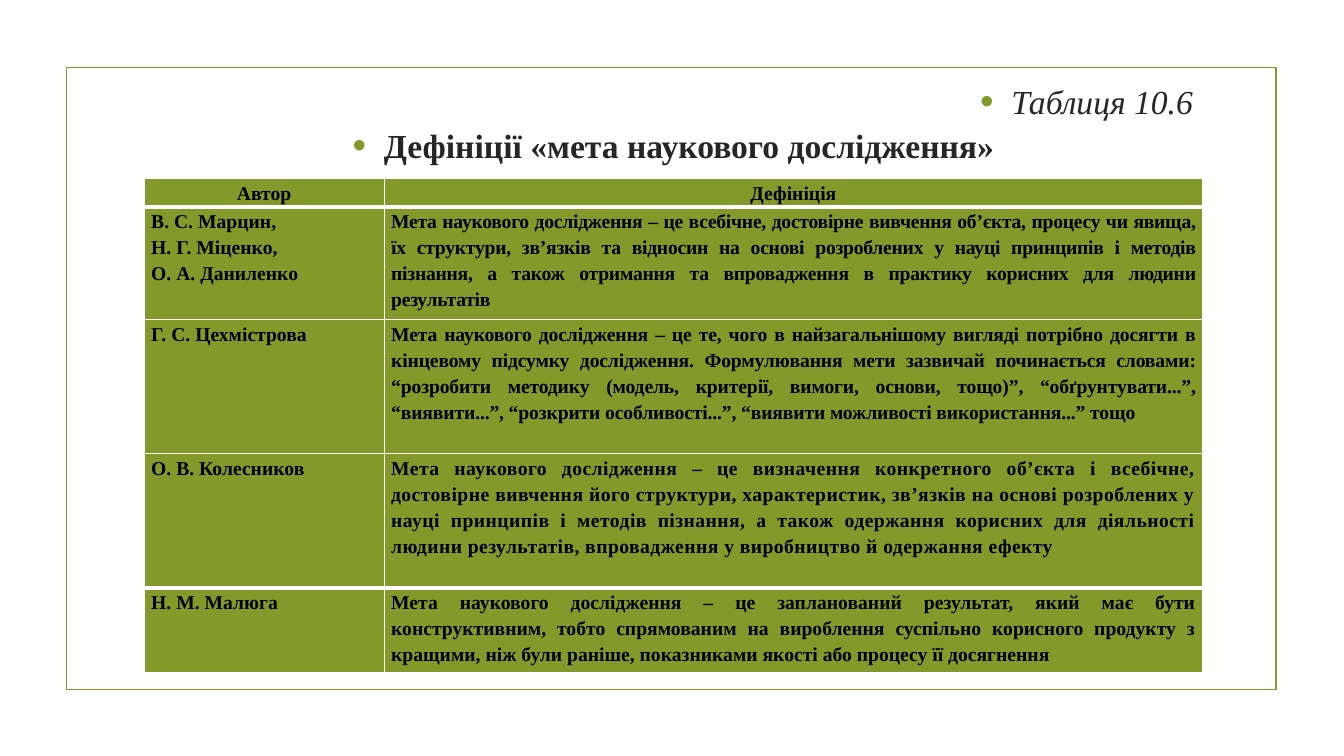
from dataclasses import dataclass

from lxml.etree import SubElement
from pptx import Presentation
from pptx.dml.color import RGBColor
from pptx.enum.shapes import MSO_SHAPE as Preset
from pptx.enum.text import PP_ALIGN as Align
from pptx.oxml.ns import qn
from pptx.util import Emu, Pt

EMU_PER_PX = 9144  # 100 px to the inch


@dataclass(frozen=True)
class Theme:
    olive: RGBColor = RGBColor(0x83, 0x99, 0x2A)
    white: RGBColor = RGBColor(0xFF, 0xFF, 0xFF)
    heading: RGBColor = RGBColor(0x26, 0x26, 0x26)
    black: RGBColor = RGBColor(0, 0, 0)
    font: str = "Times New Roman"
    heading_size: int = 24
    table_size: int = 14
    frame_line: float = 1.25
    thin_border: int = 1
    thick_border: int = 3


@dataclass(frozen=True)
class Heading:
    text: str
    align: Align
    bold: bool = False
    italic: bool = False


@dataclass(frozen=True)
class Definition:
    authors: tuple[str, ...]
    text: str
    height: int
    spacing: int = 0  # hundredths of a point between letters


THEME = Theme()
COLUMN_WIDTHS = (238, 812)
HEADER_TITLES = ("Автор", "Дефініція")
HEADER_HEIGHT = 24

HEADINGS = (
    Heading("Таблиця 10.6", Align.RIGHT, italic=True),
    Heading("Дефініції «мета наукового дослідження»", Align.CENTER, bold=True),
)

DEFINITIONS = (
    Definition(
        ("В. С. Марцин,", "Н. Г. Міценко,", "О. А. Даниленко"),
        "Мета наукового дослідження – це всебічне, достовірне вивчення об’єкта, процесу чи явища, "
        "їх структури, зв’язків та відносин на основі розроблених у науці принципів і методів "
        "пізнання, а також отримання та впровадження в практику корисних для людини результатів",
        106, -20),
    Definition(
        ("Г. С. Цехмістрова",),
        "Мета наукового дослідження – це те, чого в найзагальнішому вигляді потрібно досягти в "
        "кінцевому підсумку дослідження. Формулювання мети зазвичай починається словами: "
        "“розробити методику (модель, критерії, вимоги, основи, тощо)”, “обґрунтувати...”, "
        "“виявити...”, “розкрити особливості...”, “виявити можливості використання...” тощо",
        133, -10),
    Definition(
        ("О. В. Колесников",),
        "Мета наукового дослідження – це визначення конкретного об’єкта і всебічне, "
        "достовірне вивчення його структури, характеристик, зв’язків на основі розроблених у "
        "науці принципів і методів пізнання, а також одержання корисних для діяльності "
        "людини результатів, впровадження у виробництво й одержання ефекту",
        133, 30),
    Definition(
        ("Н. М. Малюга",),
        "Мета наукового дослідження – це запланований результат, який має бути "
        "конструктивним, тобто спрямованим на вироблення суспільно корисного продукту з "
        "кращими, ніж були раніше, показниками якості або процесу її досягнення",
        81),
)


def px(length: int) -> Emu:
    return Emu(length * EMU_PER_PX)


def add_run(paragraph, text: str, size: int, color: RGBColor,
            bold: bool = False, italic: bool = False, spacing: int = 0) -> None:
    run = paragraph.add_run()
    run.text = text
    font = run.font
    font.name, font.size = THEME.font, Pt(size)
    font.bold, font.italic = bold, italic
    font.color.rgb = color
    if spacing:
        run._r.get_or_add_rPr().set("spc", str(spacing))


def add_bullet(paragraph) -> None:
    properties = paragraph._p.get_or_add_pPr()
    properties.set("marL", str(px(31)))
    properties.set("indent", str(-px(31)))
    color = SubElement(properties, qn("a:buClr"))
    SubElement(color, qn("a:srgbClr"), val=str(THEME.olive))
    SubElement(properties, qn("a:buSzPct"), val="115000")
    SubElement(properties, qn("a:buFont"), typeface="Arial")
    SubElement(properties, qn("a:buChar"), char="•")


def add_frame(slide) -> None:
    frame = slide.shapes.add_shape(Preset.RECTANGLE, px(66), px(67), px(1200), px(617))
    frame.shadow.inherit = False
    frame.fill.background()
    frame.line.color.rgb = THEME.olive
    frame.line.width = Pt(THEME.frame_line)


def add_headings(slide) -> None:
    box = slide.shapes.add_textbox(px(143), px(71), px(1050), px(540))
    text_frame = box.text_frame
    text_frame.word_wrap = True
    for index, heading in enumerate(HEADINGS):
        paragraph = text_frame.add_paragraph() if index else text_frame.paragraphs[0]
        paragraph.alignment = heading.align
        paragraph.line_spacing = 1.1
        add_bullet(paragraph)
        add_run(paragraph, heading.text, THEME.heading_size, THEME.heading,
                heading.bold, heading.italic)


def set_borders(cell, top: int, bottom: int) -> None:
    properties = cell._tc.get_or_add_tcPr()
    side = THEME.thin_border
    for tag, width in (("a:lnL", side), ("a:lnR", side), ("a:lnT", top), ("a:lnB", bottom)):
        line = SubElement(properties, qn(tag), w=str(Pt(width)))
        fill = SubElement(line, qn("a:solidFill"))
        SubElement(fill, qn("a:srgbClr"), val=str(THEME.white))


def fill_cell(cell, lines: tuple[str, ...], align: Align, top: int, bottom: int,
              spacing: int = 0) -> None:
    cell.margin_left = cell.margin_right = px(7)
    cell.margin_top = cell.margin_bottom = 0
    set_borders(cell, top, bottom)
    cell.fill.solid()
    cell.fill.fore_color.rgb = THEME.olive
    for index, line in enumerate(lines):
        paragraph = cell.text_frame.add_paragraph() if index else cell.text_frame.paragraphs[0]
        paragraph.alignment = align
        paragraph.line_spacing = 1.2
        add_run(paragraph, line, THEME.table_size, THEME.black, bold=True, spacing=spacing)


def add_definitions(slide) -> None:
    heights = (HEADER_HEIGHT, *(definition.height for definition in DEFINITIONS))
    table = slide.shapes.add_table(len(heights), len(COLUMN_WIDTHS), px(143), px(177),
                                   px(sum(COLUMN_WIDTHS)), px(sum(heights))).table
    table.first_row = table.horz_banding = False
    for column, width in zip(table.columns, COLUMN_WIDTHS):
        column.width = px(width)
    for row, height in zip(table.rows, heights):
        row.height = px(height)

    thin, thick = THEME.thin_border, THEME.thick_border
    for column, title in enumerate(HEADER_TITLES):
        fill_cell(table.cell(0, column), (title,), Align.CENTER, thin, thick)
    last = len(DEFINITIONS)
    for row, definition in enumerate(DEFINITIONS, start=1):
        top = thick if row in (1, last) else thin
        bottom = thick if row == last - 1 else thin
        fill_cell(table.cell(row, 0), definition.authors, Align.LEFT, top, bottom)
        fill_cell(table.cell(row, 1), (definition.text,), Align.JUSTIFY, top, bottom,
                  definition.spacing)


def main() -> None:
    presentation = Presentation()
    presentation.slide_width, presentation.slide_height = px(1333), px(750)
    slide = presentation.slides.add_slide(presentation.slide_layouts[6])
    add_frame(slide)
    add_headings(slide)
    add_definitions(slide)
    presentation.save("out.pptx")


if __name__ == "__main__":
    main()
